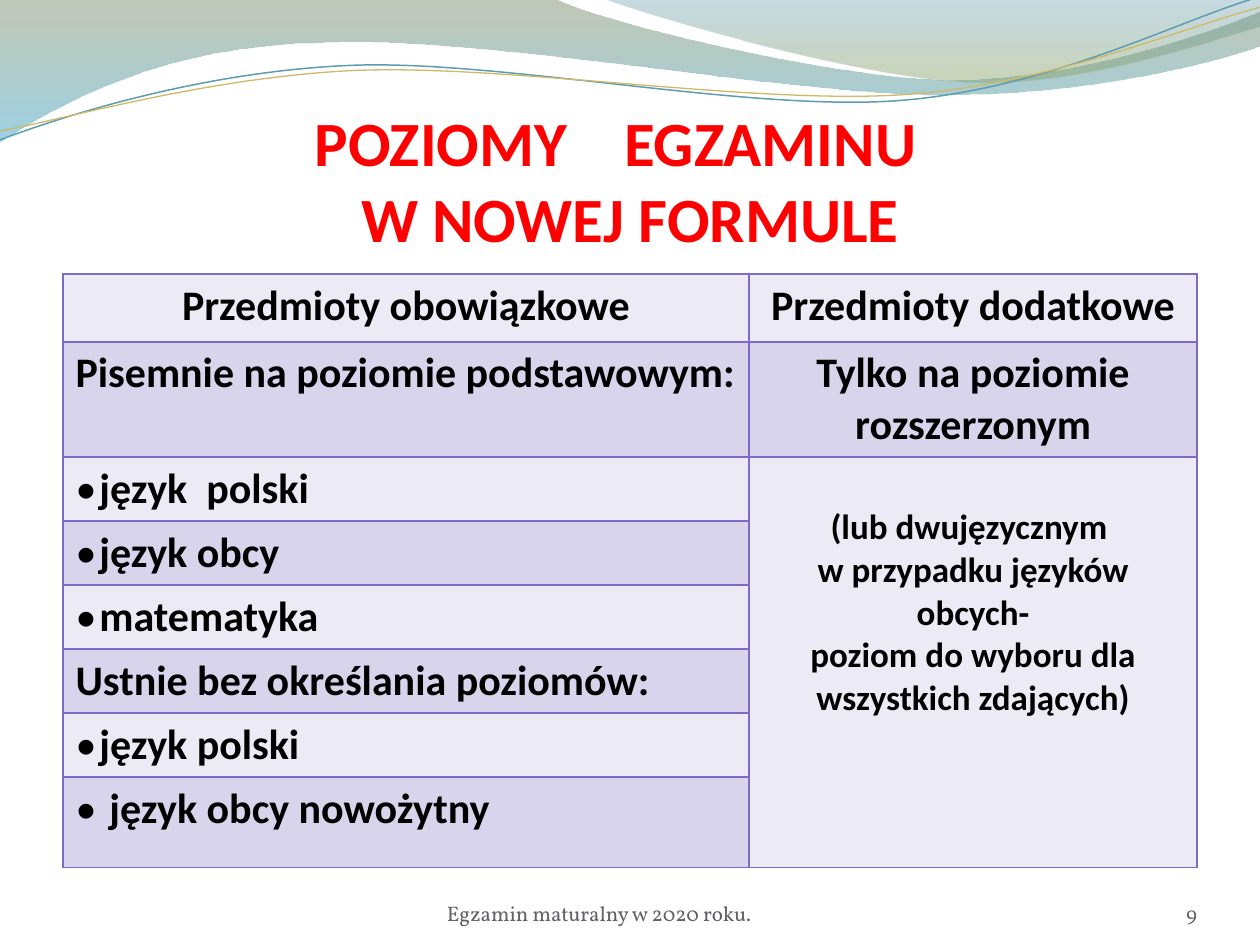
"""Build the slide on exam levels: a wave header, a title, a subject table and a footer."""
from lxml import etree
from pptx import Presentation
from pptx.dml.color import RGBColor
from pptx.enum.text import MSO_ANCHOR, PP_ALIGN
from pptx.oxml import parse_xml
from pptx.oxml.ns import nsdecls, qn
from pptx.util import Cm, Pt

LEFT, CENTER, RIGHT = PP_ALIGN.LEFT, PP_ALIGN.CENTER, PP_ALIGN.RIGHT
BOTTOM = MSO_ANCHOR.BOTTOM
COLORS = {
    "title": "FF0000", "text": "000000", "footer": "646268",
    "light": "ECEBF5", "dark": "D8D4EB", "border": "7E6BC9",
    "olive": "74855E", "sky": "4AACCE", "teal": "45889F", "moss": "8AA36D",
    "blue line": "5E9CB1", "gold line": "CEB966",
}


def color(name):
    return RGBColor.from_string(COLORS[name])


def style(paragraph, size, color_name, alignment, font_name="Calibri", bold=True):
    paragraph.alignment = alignment
    paragraph.font.name = font_name
    paragraph.font.size = Pt(size)
    paragraph.font.bold = bold
    paragraph.font.color.rgb = color(color_name)


presentation = Presentation()
presentation.slide_width, presentation.slide_height = Cm(25.4), Cm(19.05)
slide = presentation.slides.add_slide(presentation.slide_layouts[6])
shapes = slide.shapes

waves = [
    ((0, -0.03), [(11.18, -0.03), (12.09, 0.43, 16.87, 1.6, 19.25, 1.6),
                  (21.67, 1.6, 24.33, 0.66, 25.4, 0.23), (25.43, 0.91),
                  (24.97, 1.12, 22.1, 1.93, 18.95, 1.91),
                  (15.8, 1.91, 9.7, 0.71, 6.53, 0.86),
                  (3.28, 0.89, 1.17, 2.11, -0.03, 2.87), (0, -0.03)],
     [(0, "olive", 45), (1, "sky", 55)], None),
    ((12.17, -0.03), [(12.93, 0.28, 17.32, 1.57, 19.53, 1.65),
                      (21.74, 1.75, 24.41, 0.81, 25.4, 0.53), (25.4, 0),
                      (12.17, -0.03)],
     [(0, "teal", 30), (0.8, "moss", 45)], None),
    ((0, 2.82), [(1.22, 2.36, 4.01, 1.45, 7.04, 1.32),
                 (10.03, 1.19, 15.06, 2.26, 18.11, 2.03),
                 (21.16, 1.8, 23.83, 0.38, 25.35, -0.05)],
     None, ("blue line", 0.85)),
    ((0, 2.64), [(1.19, 2.44, 4.17, 1.55, 7.19, 1.42),
                 (10.24, 1.3, 15.16, 2.11, 18.21, 1.91),
                 (21.23, 1.7, 23.9, 0.53, 25.4, 0.15)],
     None, ("gold line", 0.75)),
]
for start, segments, gradient, line in waves:
    points = [(Cm(x), Cm(y)) for segment in segments
              for x, y in zip(segment[::2], segment[1::2])]
    builder = shapes.build_freeform(Cm(start[0]), Cm(start[1]))
    builder.add_line_segments(points, close=gradient is not None)
    wave = builder.convert_to_shape()
    wave.shadow.inherit = False

    line_ends = iter(list(wave.element.spPr.iter(qn("a:lnTo"))))
    for segment in segments:
        ends = [next(line_ends) for _ in segment[::2]]
        if len(ends) == 3:
            curve = etree.Element(qn("a:cubicBezTo"))
            ends[0].addprevious(curve)
            for end in ends:
                curve.append(end[0])
                end.getparent().remove(end)

    if gradient:
        wave.line.fill.background()
        wave.fill.gradient()
        wave.fill.gradient_angle = 270
        for stop, (position, name, opacity) in zip(wave.fill.gradient_stops, gradient):
            stop.position = position
            stop.color.rgb = color(name)
        for element, (_, _, opacity) in zip(wave.element.spPr.iter(qn("a:srgbClr")), gradient):
            etree.SubElement(element, qn("a:alpha")).set("val", str(opacity * 1000))
    else:
        wave.fill.background()
        wave.line.color.rgb = color(line[0])
        wave.line.width = Pt(line[1])

text_boxes = [
    ((1.27, 1.96, 22.86, 3.18), "", (36, "title", CENTER)),
    ((7.42, 17.65, 9.32, 1.02), "Egzamin maturalny w 2020 roku.",
     (12, "footer", CENTER, "Vollkorn", False)),
    ((22.02, 17.65, 2.11, 1.02), "9", (12, "footer", RIGHT, "Vollkorn", False)),
]
paragraphs = []
for place, text, look in text_boxes:
    frame = shapes.add_textbox(*map(Cm, place)).text_frame
    frame.word_wrap = True
    frame.vertical_anchor = BOTTOM
    frame.margin_left = frame.margin_right = frame.margin_top = frame.margin_bottom = 0
    frame.text = text
    style(frame.paragraphs[0], *look)
    paragraphs.append(frame.paragraphs[0])

title = paragraphs[0]
for word, spacing in [("POZIOMY", 2440), ("EGZAMINU", 820)]:
    title.add_run().text = word
    gap = title.add_run()
    gap.text = " "
    gap._r.get_or_add_rPr().set("spc", str(spacing))
title.add_line_break()
title.add_run().text = "W NOWEJ FORMULE"

row_heights = [1.37, 2.32] + [1.29] * 5 + [1.83]
left_column = [
    ("Przedmioty obowiązkowe", CENTER, None),
    ("Pisemnie na poziomie podstawowym:", LEFT, None),
    ("język  polski", LEFT, 0.48),
    ("język obcy", LEFT, 0.48),
    ("matematyka", LEFT, 0.48),
    ("Ustnie bez określania poziomów:", LEFT, None),
    ("język polski", LEFT, 0.48),
    ("język obcy nowożytny", LEFT, 0.68),
]
right_column = [
    ("Przedmioty dodatkowe", 24),
    ("Tylko na poziomie rozszerzonym", 24),
    ("(lub dwujęzycznym \nw przypadku języków obcych-\n"
     "poziom do wyboru dla wszystkich zdających)", 20),
]
table = shapes.add_table(len(row_heights), 2, Cm(1.27), Cm(5.52), Cm(22.86),
                         Cm(sum(row_heights))).table
table.first_row = table.horz_banding = False
table.columns[0].width, table.columns[1].width = Cm(13.83), Cm(9.03)
for row, height in zip(table.rows, row_heights):
    row.height = Cm(height)
table.cell(2, 1).merge(table.cell(7, 1))

for row_index, (text, alignment, indent) in enumerate(left_column):
    cell = table.cell(row_index, 0)
    cell.text = text
    paragraph = cell.text_frame.paragraphs[0]
    style(paragraph, 24, "text", alignment)
    if indent:
        properties = paragraph._p.get_or_add_pPr()
        properties.set("marL", str(Cm(indent)))
        properties.set("indent", str(-Cm(indent)))
        properties.insert(0, parse_xml(f'<a:buFont {nsdecls("a")} typeface="Calibri"/>'))
        properties.insert(1, parse_xml(f'<a:buChar {nsdecls("a")} char="•"/>'))
for row_index, (text, size) in enumerate(right_column):
    cell = table.cell(row_index, 1)
    cell.text = text
    for paragraph in cell.text_frame.paragraphs:
        style(paragraph, size, "text", CENTER)
table.cell(2, 1).margin_top = Cm(0.99)

for row_index in range(len(row_heights)):
    for column_index in range(2):
        cell = table.cell(row_index, column_index)
        band = 2 if column_index and row_index > 2 else row_index
        cell.fill.solid()
        cell.fill.fore_color.rgb = color("dark" if band % 2 else "light")
        for position, side in enumerate("LRTB"):
            cell._tc.get_or_add_tcPr().insert(position, parse_xml(
                f'<a:ln{side} {nsdecls("a")} w="{Pt(1)}"><a:solidFill>'
                f'<a:srgbClr val="{COLORS["border"]}"/></a:solidFill></a:ln{side}>'))

presentation.save("out.pptx")
